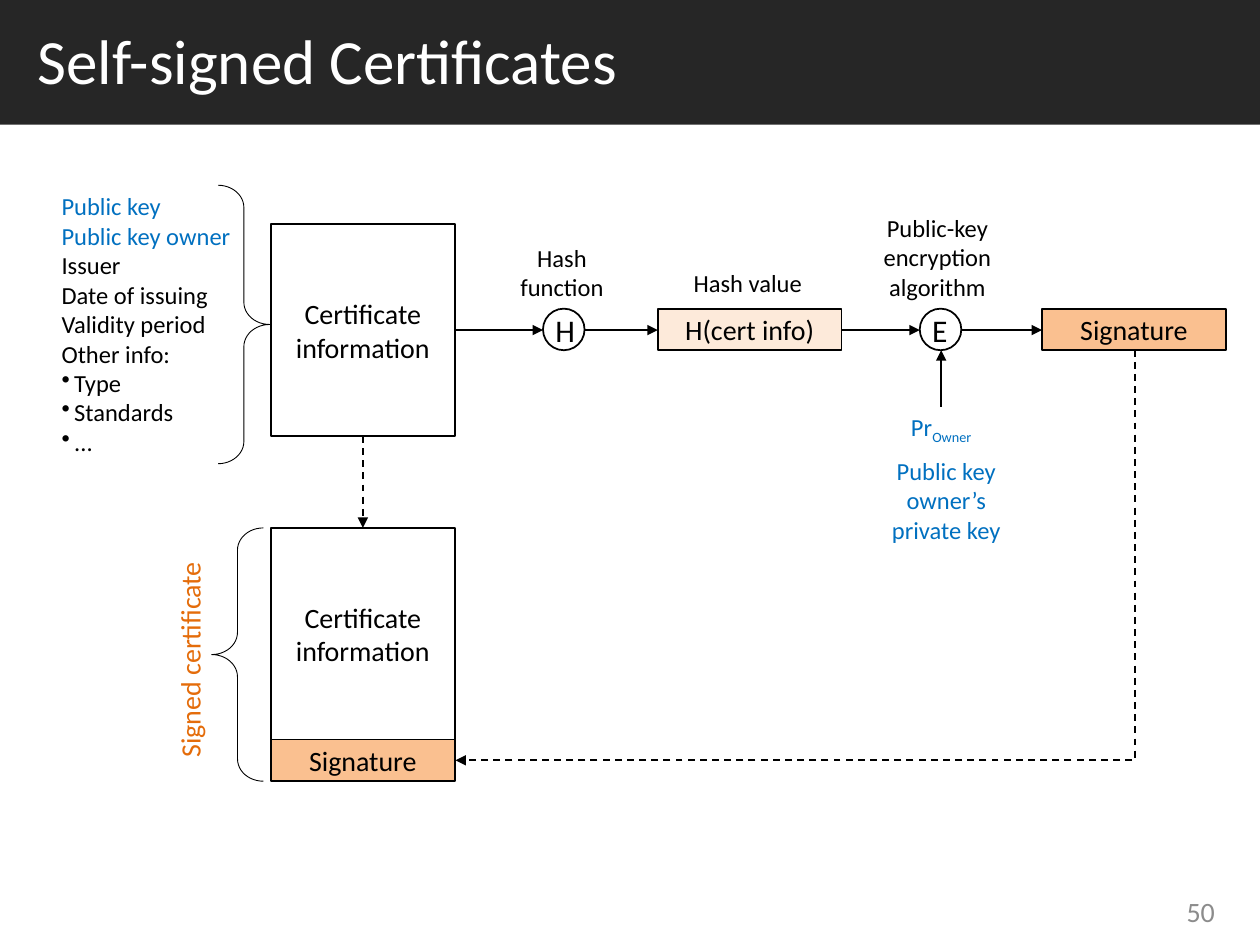
import pptx
import pptx.util
import pptx.dml.color
import pptx.enum.dml
import pptx.enum.shapes
import pptx.enum.text
import pptx.oxml.ns
import pptx.oxml.xmlchemy

Inches = pptx.util.Inches
RGBColor = pptx.dml.color.RGBColor
SHAPE = pptx.enum.shapes.MSO_SHAPE
CONNECTOR = pptx.enum.shapes.MSO_CONNECTOR
ALIGN = pptx.enum.text.PP_ALIGN
ANCHOR = pptx.enum.text.MSO_ANCHOR
qn = pptx.oxml.ns.qn
OxmlElement = pptx.oxml.xmlchemy.OxmlElement

BLACK = RGBColor(0x00, 0x00, 0x00)
WHITE = RGBColor(0xFF, 0xFF, 0xFF)
CHARCOAL = RGBColor(0x26, 0x26, 0x26)
GRAY = RGBColor(0x8C, 0x8C, 0x8C)
BLUE = RGBColor(0x00, 0x70, 0xC0)
ORANGE = RGBColor(0xE4, 0x6C, 0x0A)
LIGHT_ORANGE = RGBColor(0xFA, 0xC0, 0x90)
PALE_ORANGE = RGBColor(0xFD, 0xEA, 0xDA)

presentation = pptx.Presentation()
presentation.slide_width = Inches(10)
presentation.slide_height = Inches(7.5)
slide = presentation.slides.add_slide(presentation.slide_layouts[6])


def write_text(shape, lines, size, color=BLACK, align=ALIGN.CENTER, anchor=ANCHOR.TOP):
    """Write one paragraph per line and return the paragraphs."""
    frame = shape.text_frame
    frame.word_wrap = True
    frame.vertical_anchor = anchor
    for index, line in enumerate(lines):
        paragraph = frame.paragraphs[0] if index == 0 else frame.add_paragraph()
        paragraph.alignment = align
        run = paragraph.add_run()
        run.text = line
        run.font.name = "Calibri"
        run.font.size = pptx.util.Pt(size)
        run.font.color.rgb = color
    return frame.paragraphs


def add_arrow(start, end, dashed=False):
    arrow = slide.shapes.add_connector(
        CONNECTOR.STRAIGHT, *(Inches(value) for value in (*start, *end)))
    arrow.line.color.rgb = BLACK
    arrow.line.width = pptx.util.Pt(1)
    if dashed:
        arrow.line.dash_style = pptx.enum.dml.MSO_LINE.DASH
    arrowhead = OxmlElement("a:tailEnd")
    arrowhead.set("type", "triangle")
    arrow._element.spPr.find(qn("a:ln")).append(arrowhead)
    arrow._element.spPr.append(OxmlElement("a:effectLst"))
    return arrow


# Title bar and slide number
title = slide.shapes.add_shape(SHAPE.RECTANGLE, 0, 0, Inches(10), Inches(0.99))
title.shadow.inherit = False
title.fill.solid()
title.fill.fore_color.rgb = CHARCOAL
title.line.fill.background()
title.text_frame.margin_left = Inches(0.3)
title.text_frame.margin_bottom = Inches(0.1)
write_text(title, ["Self-signed Certificates"], 36, WHITE, ALIGN.LEFT, ANCHOR.MIDDLE)

number = slide.shapes.add_textbox(Inches(9.02), Inches(7.03), Inches(0.72), Inches(0.4))
write_text(number, ["50"], 16, GRAY, ALIGN.RIGHT, ANCHOR.MIDDLE)

# Boxes: text, left, top, height, fill, side margin
BOX_WIDTH = 1.46
for text, left, top, height, fill, margin in [
    ("H(cert info)", 5.22, 2.45, 0.33, PALE_ORANGE, 0),
    ("Signature", 8.27, 2.45, 0.33, LIGHT_ORANGE, 0),
    ("Certificate information", 2.15, 1.78, 1.68, None, 0.1),
    ("Certificate information", 2.15, 4.19, 1.68, None, 0.1),
    ("Signature", 2.15, 5.87, 0.33, LIGHT_ORANGE, 0),
]:
    box = slide.shapes.add_shape(
        SHAPE.RECTANGLE, Inches(left), Inches(top), Inches(BOX_WIDTH), Inches(height))
    box.shadow.inherit = False
    if fill is None:
        box.fill.background()
    else:
        box.fill.solid()
        box.fill.fore_color.rgb = fill
    box.line.color.rgb = BLACK
    box.line.width = pptx.util.Pt(1)
    box.text_frame.margin_left = box.text_frame.margin_right = Inches(margin)
    write_text(box, [text], 16, anchor=ANCHOR.MIDDLE)

# Operations: hash and encryption
for letter, left in [("H", 4.31), ("E", 7.3)]:
    label = slide.shapes.add_textbox(Inches(left), Inches(2.42), Inches(0.34), Inches(0.4))
    write_text(label, [letter], 18, align=ALIGN.LEFT)
    circle = slide.shapes.add_shape(
        SHAPE.OVAL, Inches(left), Inches(2.45), Inches(0.33), Inches(0.33))
    circle.shadow.inherit = False
    circle.fill.background()
    circle.line.color.rgb = BLACK
    circle.line.width = pptx.util.Pt(1)

# Captions
for lines, left, top, width, height, color in [
    (["Hash", "function"], 4.02, 1.88, 0.88, 0.57, BLACK),
    (["Hash value"], 5.36, 2.08, 1.15, 0.34, BLACK),
    (["Public-key encryption algorithm"], 6.87, 1.64, 1.14, 0.81, BLACK),
    (["Public key", "owner’s", "private key"], 6.75, 3.57, 1.52, 0.81, BLUE),
]:
    caption = slide.shapes.add_textbox(
        Inches(left), Inches(top), Inches(width), Inches(height))
    write_text(caption, lines, 14, color)

private_key = slide.shapes.add_textbox(
    Inches(7.11), Inches(3.22), Inches(0.72), Inches(0.34))
key_paragraph = write_text(private_key, ["Pr"], 14, BLUE)[0]
private_key.text_frame.word_wrap = False
subscript = key_paragraph.add_run()
subscript.text = "Owner"
subscript.font.name = "Calibri"
subscript.font.size = pptx.util.Pt(14)
subscript.font.color.rgb = BLUE
subscript._r.get_or_add_rPr().set("baseline", "-25000")

# Arrows along the signing chain, then into the signed certificate
CHAIN_Y = 2.62
for start_x, end_x in [(3.61, 4.31), (4.64, 5.22), (6.68, 7.3), (7.63, 8.27)]:
    add_arrow((start_x, CHAIN_Y), (end_x, CHAIN_Y))
add_arrow((7.47, 3.23), (7.47, 2.78))
add_arrow((2.88, 3.46), (2.88, 4.19), dashed=True)

# The elbow is laid out unrotated, then turned so that it runs down and left
elbow = add_arrow((4.68, 1.71), (7.94, 7.1), dashed=True)
elbow._element.spPr.find(qn("a:prstGeom")).set("prst", "bentConnector2")
elbow._element.spPr.find(qn("a:xfrm")).set("rot", "5400000")

# Braces
for left, top, height, rotation in [(1.73, 1.47, 2.21, 180), (1.68, 4.19, 2.01, 0)]:
    brace = slide.shapes.add_shape(
        SHAPE.LEFT_BRACE, Inches(left), Inches(top), Inches(0.41), Inches(height))
    brace.shadow.inherit = False
    brace.fill.background()
    brace.line.color.rgb = BLACK
    brace.line.width = pptx.util.Pt(0.5)
    brace.rotation = rotation
    brace.adjustments[0] = 0.43
    brace.adjustments[1] = 0.5

signed_label = slide.shapes.add_textbox(
    Inches(0.61), Inches(5.03), Inches(1.79), Inches(0.37))
signed_label.rotation = 270
write_text(signed_label, ["Signed certificate"], 16, ORANGE, ALIGN.LEFT)

# Contents of the certificate
contents = slide.shapes.add_textbox(Inches(0.39), Inches(1.47), Inches(1.62), Inches(2.22))
content_paragraphs = write_text(contents, [
    "Public key", "Public key owner", "Issuer", "Date of issuing", "Validity period",
    "Other info:", "Type", "Standards", "..."], 14, align=ALIGN.LEFT)
for paragraph in content_paragraphs[:2]:
    paragraph.runs[0].font.color.rgb = BLUE
for paragraph in content_paragraphs[-3:]:
    properties = paragraph._p.get_or_add_pPr()
    properties.set("marL", str(Inches(0.1)))
    properties.set("indent", str(-Inches(0.1)))
    bullet = OxmlElement("a:buChar")
    bullet.set("char", "•")
    properties.append(bullet)

presentation.save("out.pptx")
